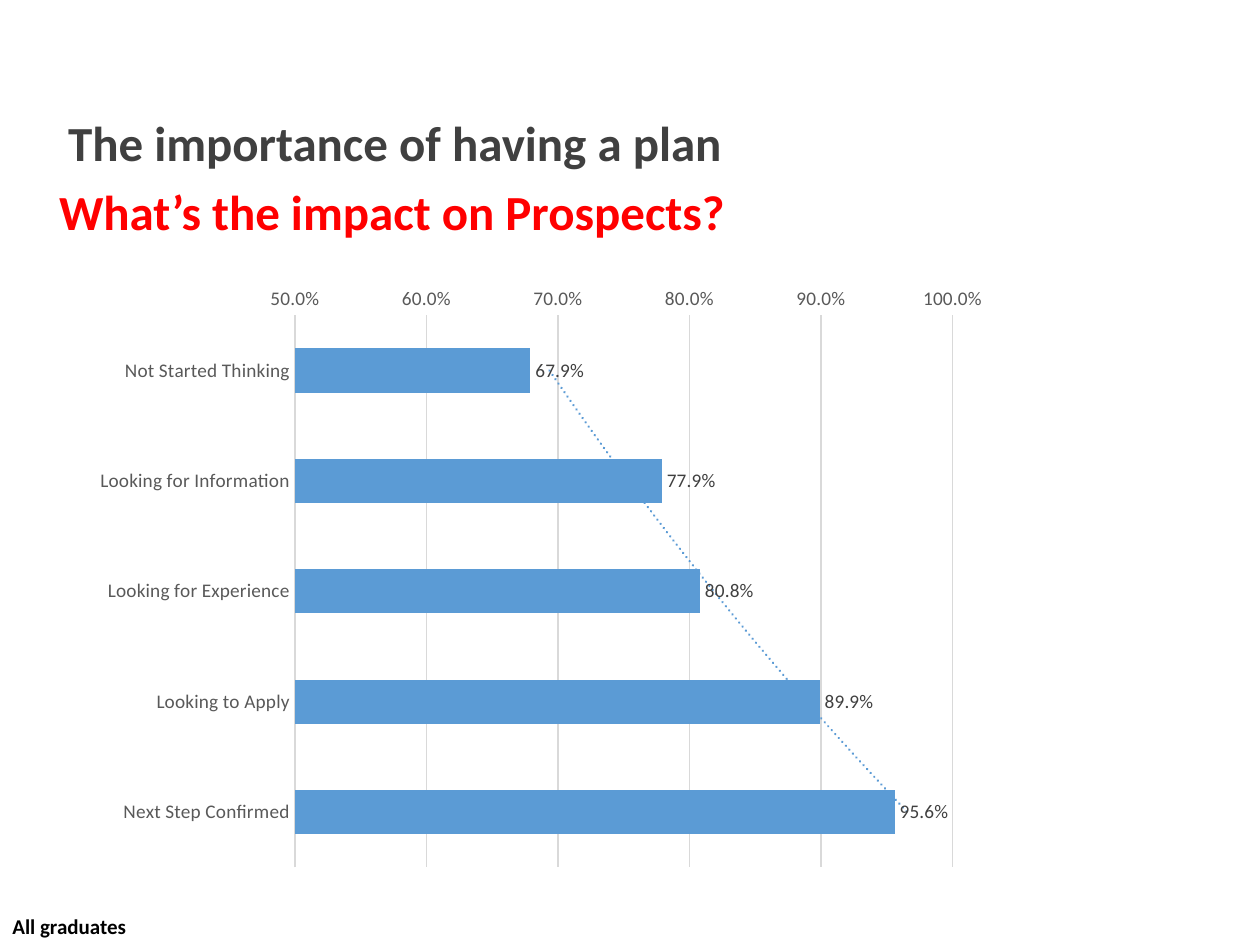
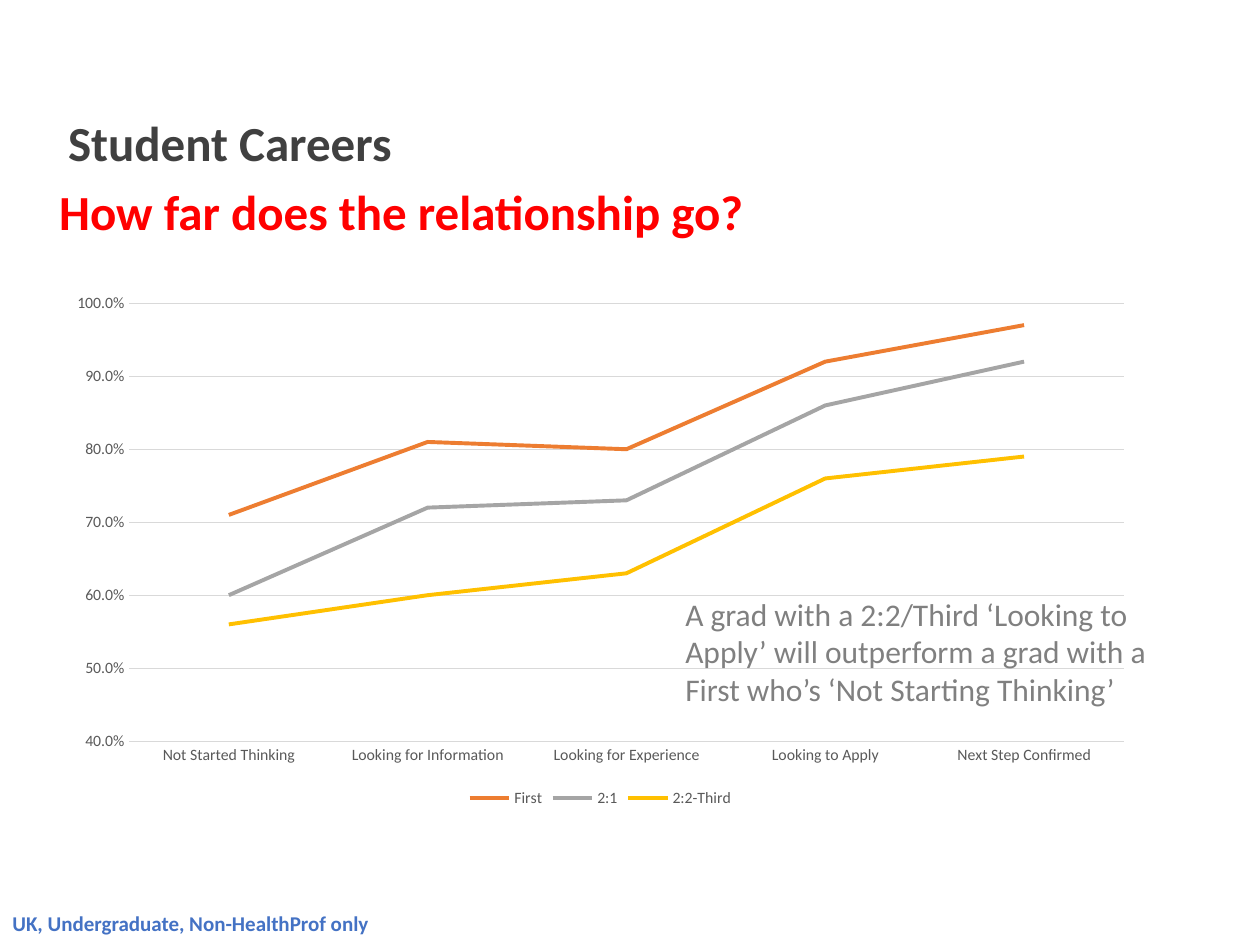
"""Build two slides on how career planning relates to graduate prospects."""
from lxml.etree import SubElement
from pptx import Presentation
from pptx.chart.data import CategoryChartData
from pptx.dml.color import RGBColor
from pptx.enum.chart import XL_CHART_TYPE, XL_LABEL_POSITION, XL_LEGEND_POSITION, XL_TICK_MARK
from pptx.enum.text import MSO_ANCHOR, MSO_AUTO_SIZE, PP_ALIGN
from pptx.oxml import parse_xml
from pptx.oxml.ns import nsdecls, qn
from pptx.util import Pt

FONT = "Calibri"
COLORS = {
    "heading": "404040", "question": "FF0000", "black": "000000", "link": "4472C4",
    "note": "808080", "axis": "595959", "grid": "D9D9D9", "bar": "5B9BD5",
    "First": "ED7D31", "2:1": "A5A5A5", "2:2-Third": "FFC000",
}
STAGES = ["Not Started Thinking", "Looking for Information", "Looking for Experience",
          "Looking to Apply", "Next Step Confirmed"]
PROSPECTS = {"Series 1": [0.679, 0.779, 0.808, 0.899, 0.956]}
BY_DEGREE = {
    "First": [0.71, 0.81, 0.8, 0.92, 0.97],
    "2:1": [0.6, 0.72, 0.73, 0.86, 0.92],
    "2:2-Third": [0.56, 0.6, 0.63, 0.76, 0.79],
}


def rgb(name):
    return RGBColor.from_string(COLORS[name])


def set_font(font, size, color, bold=False):
    font.name, font.size, font.bold = FONT, Pt(size), bold
    font.color.rgb = rgb(color)


def write(sp, text, *, size, color, bold=False, wrap=True, anchor=MSO_ANCHOR.TOP,
          line_spacing=None, space_before=0, auto_size=MSO_AUTO_SIZE.NONE):
    tf = sp.text_frame
    tf.word_wrap, tf.vertical_anchor, tf.auto_size = wrap, anchor, auto_size
    p = tf.paragraphs[0]
    p.alignment, p.line_spacing, p.space_before = PP_ALIGN.LEFT, line_spacing, Pt(space_before)
    r = p.add_run()
    r.text = text
    set_font(r.font, size, color, bold)
    return p


def place(sp, left, top, width, height):
    sp.left, sp.top, sp.width, sp.height = Pt(left), Pt(top), Pt(width), Pt(height)


def add_headed_slide(prs, heading, question):
    s = prs.slides.add_slide(prs.slide_layouts[1])
    title, body = s.placeholders
    place(title, 31.7, 58.3, 458, 45.4)
    write(title, heading, size=28, color="heading", bold=True, anchor=MSO_ANCHOR.MIDDLE)
    place(body, 26.6, 103.7, 666, 53.3)
    p = write(body, question, size=28, color="question", bold=True,
              line_spacing=0.9, space_before=10)
    pPr = p._p.get_or_add_pPr()
    pPr.set("marL", "0")
    pPr.set("indent", "0")
    SubElement(pPr, qn("a:buNone"))
    return s


def add_text(s, text, left, top, width, height, **fmt):
    sp = s.shapes.add_textbox(Pt(left), Pt(top), Pt(width), Pt(height))
    write(sp, text, auto_size=MSO_AUTO_SIZE.SHAPE_TO_FIT_TEXT, **fmt)


def add_chart(s, kind, values, box, *, size, minimum):
    data = CategoryChartData(number_format="0.0%")
    data.categories = STAGES
    for name, numbers in values.items():
        data.add_series(name, numbers)
    chart = s.shapes.add_chart(kind, *map(Pt, box), data).chart
    chart.has_title = chart.has_legend = False
    set_font(chart.font, size, "black")
    chart.plots[0].vary_by_categories = False
    cat, val = chart.category_axis, chart.value_axis
    for axis in (cat, val):
        axis.major_tick_mark = axis.minor_tick_mark = XL_TICK_MARK.NONE
        set_font(axis.tick_labels.font, size, "axis")
    val.minimum_scale, val.maximum_scale, val.major_unit = minimum, 1, 0.1
    val.tick_labels.number_format = "0.0%"
    val.tick_labels.number_format_is_linked = False
    val.has_major_gridlines = True
    for line in (cat.format.line, val.major_gridlines.format.line):
        line.width = Pt(0.75)
        line.color.rgb = rgb("grid")
    val.format.line.fill.background()
    return chart


def add_trend(series, color):
    trend = parse_xml(
        f'<c:trendline {nsdecls("c", "a")}><c:spPr><a:ln w="{Pt(1.5)}" cap="rnd"><a:solidFill>'
        f'<a:srgbClr val="{COLORS[color]}"/></a:solidFill><a:prstDash val="sysDot"/></a:ln></c:spPr>'
        '<c:trendlineType val="exp"/><c:dispRSqr val="0"/><c:dispEq val="0"/></c:trendline>')
    series._element.find(qn("c:cat")).addprevious(trend)


def add_bars(s, values, box):
    chart = add_chart(s, XL_CHART_TYPE.BAR_CLUSTERED, values, box, size=11, minimum=0.5)
    chart.category_axis.reverse_order = True
    chart.plots[0].gap_width = 150
    series = chart.plots[0].series[0]
    series.format.fill.solid()
    series.format.fill.fore_color.rgb = rgb("bar")
    labels = series.data_labels
    labels.show_value = True
    labels.number_format, labels.number_format_is_linked = "0.0%", False
    labels.position = XL_LABEL_POSITION.OUTSIDE_END
    set_font(labels.font, 11, "heading")
    add_trend(series, "bar")


def add_lines(s, values, box):
    chart = add_chart(s, XL_CHART_TYPE.LINE, values, box, size=9, minimum=0.4)
    chart.has_legend = True
    chart.legend.position = XL_LEGEND_POSITION.BOTTOM
    chart.legend.include_in_layout = False
    set_font(chart.legend.font, 9, "axis")
    for series in chart.plots[0].series:
        series.smooth = False
        series.format.line.width = Pt(2.25)
        series.format.line.color.rgb = rgb(series.name)


def main():
    prs = Presentation()
    prs.slide_width, prs.slide_height = Pt(720), Pt(540)

    s = add_headed_slide(prs, "The importance of having a plan", "What’s the impact on Prospects?")
    add_text(s, "All graduates", 0, 518.4, 91.4, 21.6,
             size=12, color="black", bold=True, wrap=False)
    add_bars(s, PROSPECTS, (46.8, 157, 524.9, 345.6))

    s = add_headed_slide(prs, "Student Careers", "How far does the relationship go?")
    add_lines(s, BY_DEGREE, (31.7, 162, 622.8, 302.4))
    add_text(s, "UK, Undergraduate, Non-HealthProf only", 0, 517, 249.1, 21.6,
             size=12, color="link", bold=True, wrap=False)
    add_text(s, "A grad with a 2:2/Third ‘Looking to Apply’ will outperform a grad with a "
             "First who’s ‘Not Starting Thinking’", 384.5, 336.2, 308.2, 72.7,
             size=18, color="note")

    prs.save("out.pptx")


if __name__ == "__main__":
    main()
